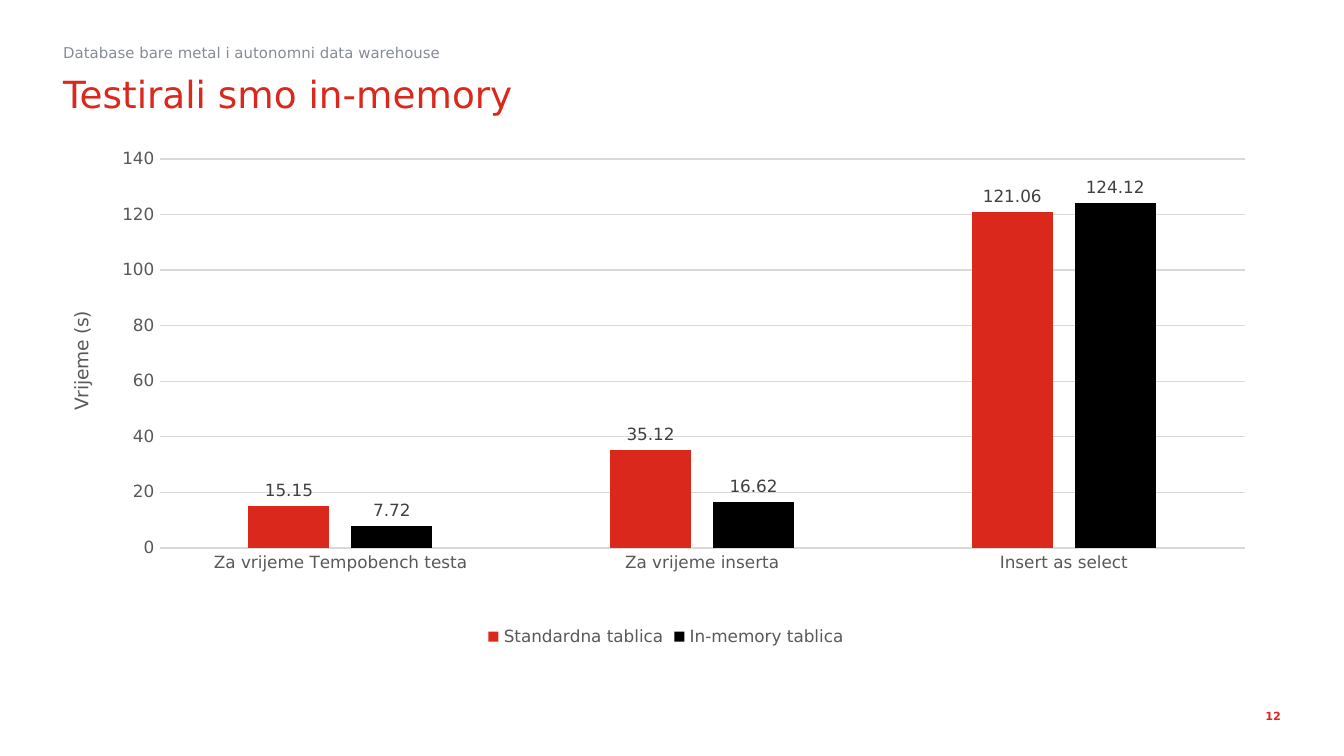
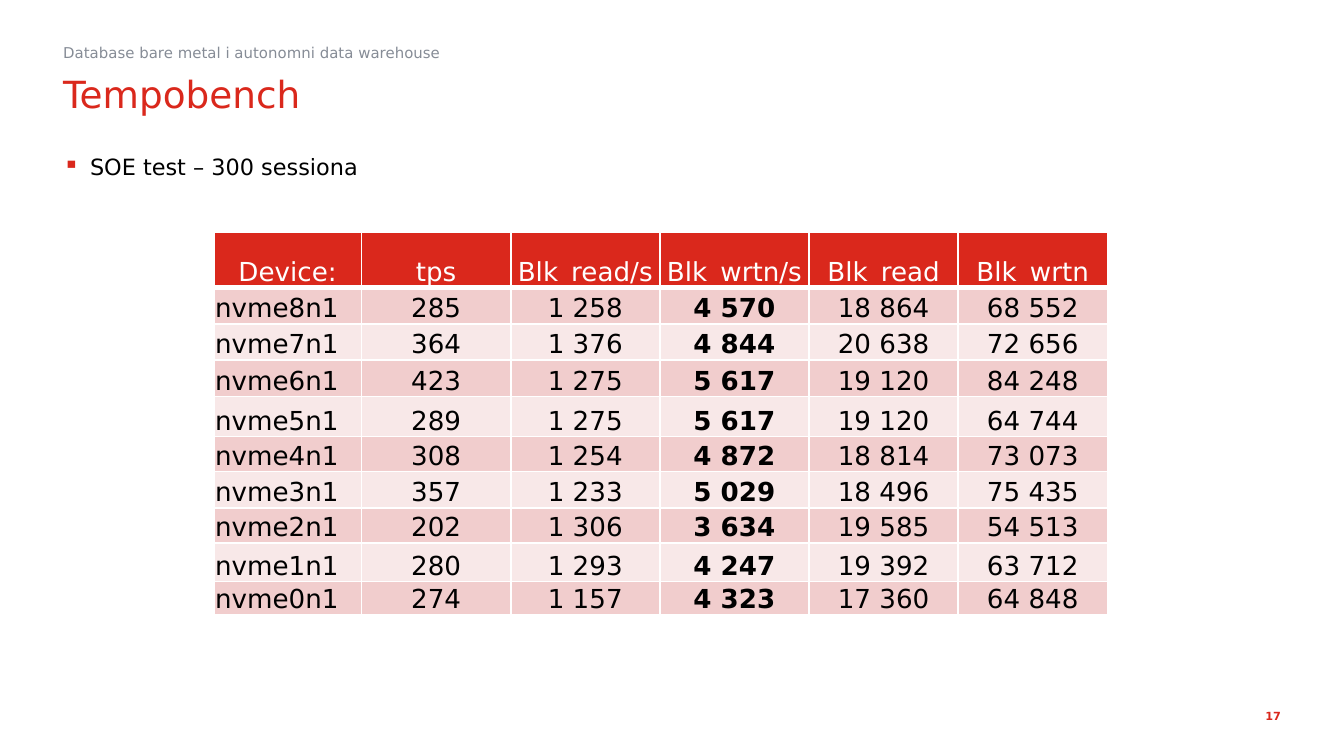
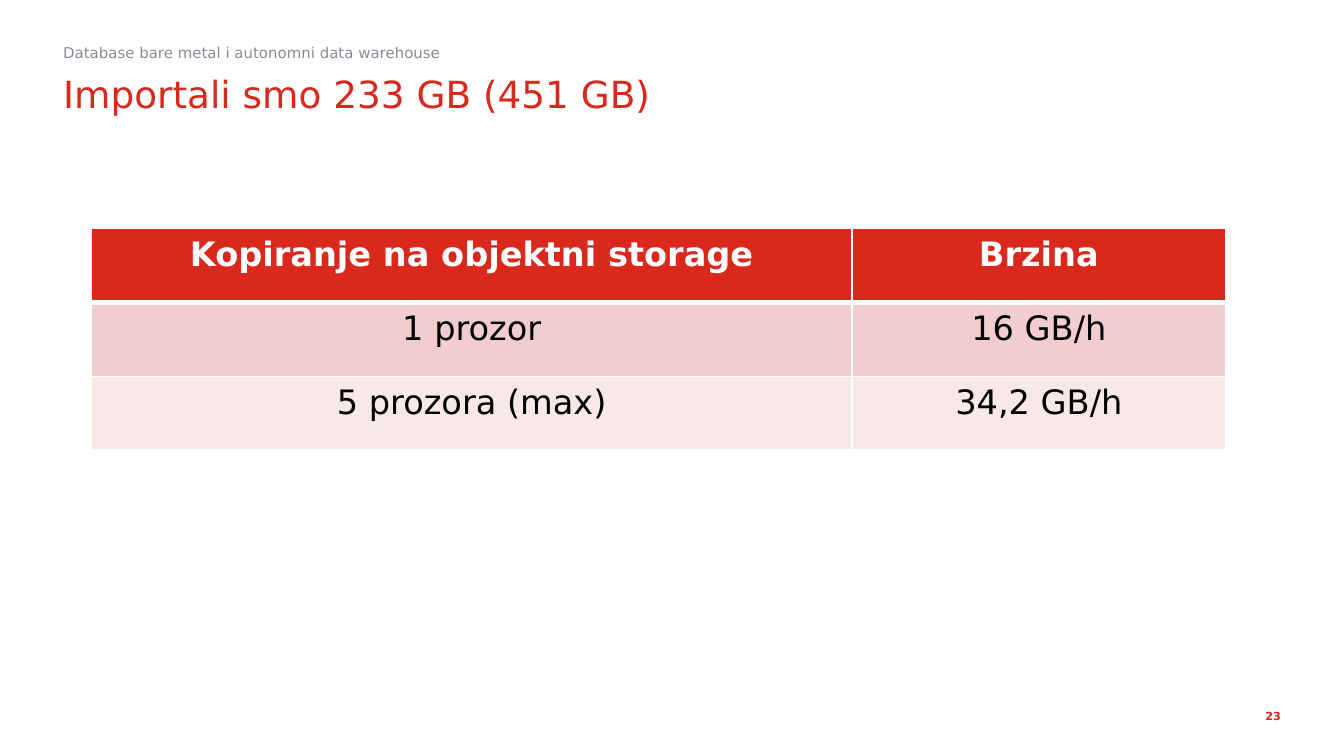
import pptx
import pptx.chart.data
import pptx.dml.color
import pptx.enum.chart
import pptx.enum.text
import pptx.oxml
import pptx.oxml.ns
import pptx.util

RGB = pptx.dml.color.RGBColor
RED = RGB(0xDA, 0x28, 0x1C)
BLACK = RGB(0, 0, 0)
WHITE = RGB(255, 255, 255)
SLATE = RGB(0x86, 0x8C, 0x96)
AXIS_TEXT = RGB(0x59, 0x59, 0x59)
LABEL_TEXT = RGB(0x40, 0x40, 0x40)
GRID_LINE = RGB(0xD9, 0xD9, 0xD9)
BANDS = (RGB(0xF1, 0xCD, 0xCD), RGB(0xF8, 0xE8, 0xE8))

FONT = "DejaVu Sans"
DECK_NAME = "Database bare metal i autonomni data warehouse"
WIDTH = pptx.util.Inches(10)
HEIGHT = WIDTH * 9 // 16
UNIT = WIDTH / 100

SECTION_AREA = (4.7, 3.1, 90.6, 1.7)
TITLE_AREA = (4.7, 4.8, 90.6, 8.2)
BODY_AREA = (4.7, 10.4, 90.6, 33.8)
NUMBER_AREA = (77.7, 51.7, 18.6, 3.2)
CHART_AREA = (4.7, 9.9, 89.7, 38.6)

ALIGN = pptx.enum.text.PP_ALIGN
ANCHOR = pptx.enum.text.MSO_ANCHOR
CHART = pptx.enum.chart
DRAWING_NS = pptx.oxml.ns.nsdecls("a")
CHART_NS = pptx.oxml.ns.nsdecls("c")

DEVICE_ROWS = [
    ("Device:", "tps", "Blk_read/s", "Blk_wrtn/s", "Blk_read", "Blk_wrtn"),
    ("nvme8n1", "285", "1 258", "4 570", "18 864", "68 552"),
    ("nvme7n1", "364", "1 376", "4 844", "20 638", "72 656"),
    ("nvme6n1", "423", "1 275", "5 617", "19 120", "84 248"),
    ("nvme5n1", "289", "1 275", "5 617", "19 120", "64 744"),
    ("nvme4n1", "308", "1 254", "4 872", "18 814", "73 073"),
    ("nvme3n1", "357", "1 233", "5 029", "18 496", "75 435"),
    ("nvme2n1", "202", "1 306", "3 634", "19 585", "54 513"),
    ("nvme1n1", "280", "1 293", "4 247", "19 392", "63 712"),
    ("nvme0n1", "274", "1 157", "4 323", "17 360", "64 848"),
]
SPEED_ROWS = [
    ("Kopiranje na objektni storage", "Brzina"),
    ("1 prozor", "16 GB/h"),
    ("5 prozora (max)", "34,2 GB/h"),
]
TEST_TIMES = {
    "Standardna tablica": (RED, (15.15, 35.12, 121.06)),
    "In-memory tablica": (BLACK, (7.72, 16.62, 124.12)),
}
TEST_NAMES = ("Za vrijeme Tempobench testa", "Za vrijeme inserta", "Insert as select")


def units(*lengths):
    return [round(n * UNIT) for n in lengths]


def style_font(font, size, color, bold=False):
    font.name = FONT
    font.size = pptx.util.Pt(size)
    font.bold = bold
    font.color.rgb = color


def add_text(slide, area, text, size, color, insets=(0, 0, 0, 0), bold=False,
             align=ALIGN.LEFT, anchor=ANCHOR.TOP, spacing=1.0, bullet=None):
    tf = slide.shapes.add_textbox(*units(*area)).text_frame
    tf.word_wrap = True
    tf.vertical_anchor = anchor
    tf.margin_left, tf.margin_top, tf.margin_right, tf.margin_bottom = units(*insets)
    p = tf.paragraphs[0]
    p.text = text
    p.alignment = align
    p.line_spacing = spacing
    if bullet:
        add_bullet(p, bullet)
    style_font(p.font, size, color, bold)


def add_bullet(p, symbol):
    props = p._p.get_or_add_pPr()
    indent, = units(2)
    props.set("marL", str(indent))
    props.set("indent", str(-indent))
    for xml in (f'<a:buClr {DRAWING_NS}><a:srgbClr val="{RED}"/></a:buClr>',
                f'<a:buChar {DRAWING_NS} char="{symbol}"/>'):
        props.append(pptx.oxml.parse_xml(xml))


def add_page(prs, title, number):
    slide = prs.slides.add_slide(prs.slide_layouts[6])
    slide.background.fill.solid()
    slide.background.fill.fore_color.rgb = WHITE
    add_text(slide, NUMBER_AREA, str(number), 6, RED, (1, 0.5, 1, 0.6),
             bold=True, align=ALIGN.RIGHT, anchor=ANCHOR.MIDDLE)
    add_text(slide, SECTION_AREA, DECK_NAME, 8, SLATE, spacing=1.1)
    add_text(slide, TITLE_AREA, title, 20, RED, (0, 0.5, 0, 0.5))
    return slide


def set_borders(cell, widths):
    props = cell._tc.get_or_add_tcPr()
    for side, points in widths.items():
        props.append(pptx.oxml.parse_xml(
            f'<a:ln{side} {DRAWING_NS} w="{pptx.util.Pt(points)}"><a:solidFill>'
            f'<a:srgbClr val="{WHITE}"/></a:solidFill></a:ln{side}>'))


def add_grid(slide, corner, widths, heights, rows, size):
    area = (*corner, sum(widths), sum(heights))
    table = slide.shapes.add_table(len(rows), len(widths), *units(*area)).table
    table.horz_banding = False
    for column, width in zip(table.columns, units(*widths)):
        column.width = width
    for row, height in zip(table.rows, units(*heights)):
        row.height = height
    for i, row in enumerate(rows):
        for j, text in enumerate(row):
            cell = table.cell(i, j)
            set_borders(cell, {"L": 1, "R": 1, "T": 3 if i == 1 else 1,
                               "B": 3 if i == 0 else 1})
            cell.fill.solid()
            cell.fill.fore_color.rgb = BANDS[(i - 1) % 2] if i else RED
            cell.text = text
            p = cell.text_frame.paragraphs[0]
            p.alignment = ALIGN.CENTER
            style_font(p.font, size, BLACK if i else WHITE)
    return table


def add_device_table(slide, corner):
    widths = [11] + [11.1] * 5
    heights = (4.1, 2.7, 2.7, 2.7, 3, 2.6, 2.7, 2.6, 2.9, 2.1)
    table = add_grid(slide, corner, widths, heights, DEVICE_ROWS, 14)
    for cell in table.iter_cells():
        cell.vertical_anchor = ANCHOR.BOTTOM
        cell.margin_left, cell.margin_right, cell.margin_top = units(0.1, 0.1, 0.1)
        cell.margin_bottom = 0
    for i in range(1, len(DEVICE_ROWS)):
        table.cell(i, 0).text_frame.paragraphs[0].alignment = ALIGN.LEFT
        table.cell(i, 3).text_frame.paragraphs[0].font.bold = True


def add_speed_table(slide, corner):
    table = add_grid(slide, corner, (56.6, 27.8), [5.5] * 3, SPEED_ROWS, 18)
    for j in range(2):
        table.cell(0, j).text_frame.paragraphs[0].font.bold = True


def set_plot_area(chart, **shares):
    plot_area = chart._chartSpace.chart.plotArea
    for layout in plot_area.findall(pptx.oxml.ns.qn("c:layout")):
        plot_area.remove(layout)
    sizes = "".join(f'<c:{key} val="{value}"/>' for key, value in shares.items())
    plot_area.insert(0, pptx.oxml.parse_xml(
        f'<c:layout {CHART_NS}><c:manualLayout><c:layoutTarget val="inner"/>'
        f'<c:xMode val="edge"/><c:yMode val="edge"/>{sizes}'
        f'</c:manualLayout></c:layout>'))


def style_axes(chart):
    for axis in (chart.category_axis, chart.value_axis):
        axis.major_tick_mark = axis.minor_tick_mark = CHART.XL_TICK_MARK.NONE
        style_font(axis.tick_labels.font, 9, AXIS_TEXT)
    values = chart.value_axis
    values.minimum_scale, values.maximum_scale, values.major_unit = 0, 140, 20
    values.format.line.fill.background()
    for line in (chart.category_axis.format.line, values.major_gridlines.format.line):
        line.color.rgb = GRID_LINE
        line.width = pptx.util.Pt(0.75)
    tf = values.axis_title.text_frame
    tf.text = "Vrijeme (s)"
    tf._txBody.bodyPr.set("rot", "-5400000")
    tf._txBody.bodyPr.set("vert", "horz")
    style_font(tf.paragraphs[0].font, 10, AXIS_TEXT)


def add_time_chart(slide, area):
    data = pptx.chart.data.CategoryChartData()
    data.categories = TEST_NAMES
    for name, (_, times) in TEST_TIMES.items():
        data.add_series(name, times)
    chart = slide.shapes.add_chart(
        CHART.XL_CHART_TYPE.COLUMN_CLUSTERED, *units(*area), data).chart
    chart.has_title = False
    style_font(chart.font, 10, BLACK)
    set_plot_area(chart, x=0.08, y=0.05, w=0.9, h=0.75)
    style_axes(chart)
    chart.has_legend = True
    chart.legend.position = CHART.XL_LEGEND_POSITION.BOTTOM
    chart.legend.include_in_layout = False
    style_font(chart.legend.font, 9, AXIS_TEXT)
    plot = chart.plots[0]
    plot.vary_by_categories = False
    plot.gap_width, plot.overlap = 219, -27
    for series, (color, _) in zip(plot.series, TEST_TIMES.values()):
        series.format.fill.solid()
        series.format.fill.fore_color.rgb = color
        labels = series.data_labels
        labels.show_value = True
        labels.position = CHART.XL_LABEL_POSITION.OUTSIDE_END
        style_font(labels.font, 9, LABEL_TEXT)


def main():
    prs = pptx.Presentation()
    prs.slide_width, prs.slide_height = WIDTH, HEIGHT

    slide = add_page(prs, "Testirali smo in-memory", 12)
    add_time_chart(slide, CHART_AREA)

    slide = add_page(prs, "Tempobench", 17)
    add_text(slide, BODY_AREA, "SOE test – 300 sessiona", 12, BLACK,
             spacing=1.5, bullet="▪")
    add_device_table(slide, (15.9, 17.3))

    slide = add_page(prs, "Importali smo 233 GB (451 GB)", 23)
    add_speed_table(slide, (6.8, 17))

    prs.save("out.pptx")


if __name__ == "__main__":
    main()
